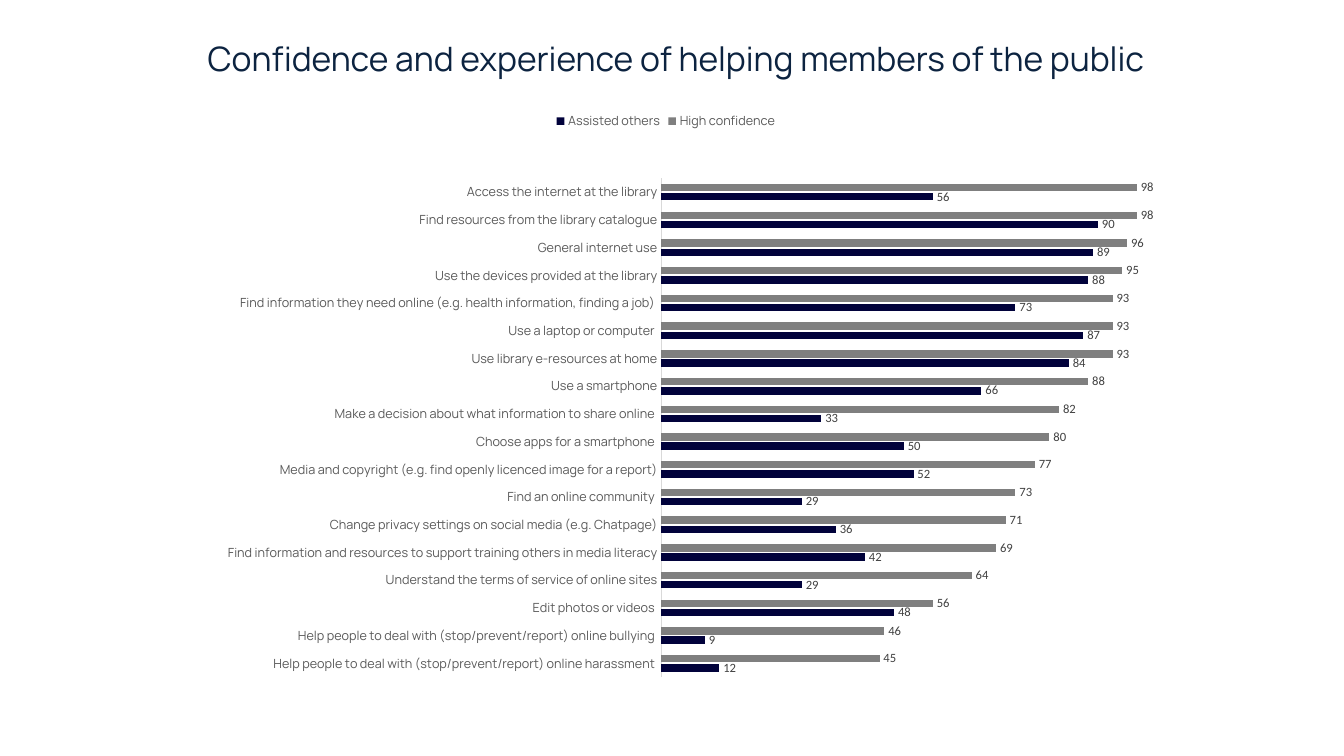
from lxml import etree
from pptx import Presentation
from pptx.chart.data import CategoryChartData as ChartData
from pptx.dml.color import RGBColor as RGB
from pptx.enum.chart import (XL_CHART_TYPE as Kind, XL_LABEL_POSITION as Label,
                             XL_LEGEND_POSITION as Legend, XL_TICK_LABEL_POSITION as TickLabel,
                             XL_TICK_MARK as Tick)
from pptx.enum.text import MSO_ANCHOR as Anchor, PP_ALIGN as Align
from pptx.oxml.ns import qn
from pptx.util import Inches, Pt

COLORS = {"title": "0C2340", "text": "595959", "value": "404040", "axis": "D9D9D9",
          "high": "7F7F7F", "helped": "01023B", "base": "000000"}
HEAD, BODY = "Manrope", "Calibri"

# Task, share with high confidence, share who assisted others
TASKS = [
    ("Access the internet at the library", 98, 56),
    ("Find resources from the library catalogue", 98, 90),
    ("General internet use", 96, 89),
    ("Use the devices provided at the library", 95, 88),
    ("Find information they need online (e.g. health information, finding a job) ", 93, 73),
    ("Use a laptop or computer ", 93, 87),
    ("Use library e-resources at home", 93, 84),
    ("Use a smartphone", 88, 66),
    ("Make a decision about what information to share online ", 82, 33),
    ("Choose apps for a smartphone ", 80, 50),
    ("Media and copyright (e.g. find openly licenced image for a report)", 77, 52),
    ("Find an online community ", 73, 29),
    ("Change privacy settings on social media (e.g. Chatpage)", 71, 36),
    ("Find information and resources to support training others in media literacy", 69, 42),
    ("Understand the terms of service of online sites", 64, 29),
    ("Edit photos or videos ", 56, 48),
    ("Help people to deal with (stop/prevent/report) online bullying ", 46, 9),
    ("Help people to deal with (stop/prevent/report) online harassment ", 45, 12),
]


def set_font(font, size, color, name):
    font.size, font.name, font.bold = Pt(size), name, False
    font.color.rgb = RGB.from_string(COLORS[color])


def write(frame, text, size=24, color="title", name=HEAD, align=Align.LEFT):
    frame.word_wrap = True
    frame.vertical_anchor = Anchor.TOP
    para = frame.paragraphs[0]
    para.alignment = align
    run = para.add_run()
    run.text = text
    set_font(run.font, size, color, name)


def add_title(slide, left, top, width, height):
    title = slide.shapes.title
    title.left, title.top = Inches(left), Inches(top)
    title.width, title.height = Inches(width), Inches(height)
    write(title.text_frame, "Confidence and experience of helping members of the public")


def place_plot(chart, **place):
    """Fix the inner plot area, as shares of the chart box."""
    area = chart._chartSpace.chart.plotArea
    for old in area.findall(qn("c:layout")):
        area.remove(old)
    layout = etree.Element(qn("c:layout"))
    area.insert(0, layout)
    manual = etree.SubElement(layout, qn("c:manualLayout"))
    parts = {"layoutTarget": "inner", "xMode": "edge", "yMode": "edge", **place}
    for tag, value in parts.items():
        etree.SubElement(manual, qn("c:" + tag)).set("val", str(value))


def add_bars(slide, left, top, width, height):
    names, high, helped = zip(*TASKS)
    data = ChartData(number_format="###0")
    data.categories = names
    data.add_series("High confidence", high)
    data.add_series("Assisted others", helped)
    chart = slide.shapes.add_chart(Kind.BAR_CLUSTERED, Inches(left), Inches(top),
                                   Inches(width), Inches(height), data).chart
    set_font(chart.font, 10, "base", BODY)
    chart.has_title = False
    place_plot(chart, x=0.496, y=0.129, w=0.49, h=0.829)

    # Legend
    chart.has_legend = True
    chart.legend.position = Legend.TOP
    chart.legend.include_in_layout = False
    set_font(chart.legend.font, 9, "text", HEAD)

    # Axes
    tasks = chart.category_axis
    tasks.reverse_order = True
    tasks.major_tick_mark = tasks.minor_tick_mark = Tick.NONE
    tasks.tick_label_position = TickLabel.NEXT_TO_AXIS
    tasks.format.line.color.rgb = RGB.from_string(COLORS["axis"])
    tasks.format.line.width = Pt(0.75)
    set_font(tasks.tick_labels.font, 9, "text", HEAD)
    share = chart.value_axis
    share.minimum_scale, share.maximum_scale = 0, 120
    share.has_major_gridlines = False
    share.visible = False

    # Bars and their values
    plot = chart.plots[0]
    plot.gap_width, plot.overlap = 150, -25
    plot.vary_by_categories = False
    for bars, color in zip(plot.series, ("high", "helped")):
        bars.format.fill.solid()
        bars.format.fill.fore_color.rgb = RGB.from_string(COLORS[color])
        bars.invert_if_negative = False
        labels = bars.data_labels
        labels.show_value = True
        labels.position = Label.OUTSIDE_END
        labels.number_format, labels.number_format_is_linked = "###0", False
        set_font(labels.font, 9, "value", BODY)


def main():
    deck = Presentation()
    deck.slide_width, deck.slide_height = Inches(13.33), Inches(7.5)
    slide = deck.slides.add_slide(deck.slide_layouts[5])
    add_bars(slide, 0.71, 1, 11.79, 5.97)
    add_title(slide, 1.96, 0.33, 10.3, 0.5)
    deck.save("out.pptx")


if __name__ == "__main__":
    main()
